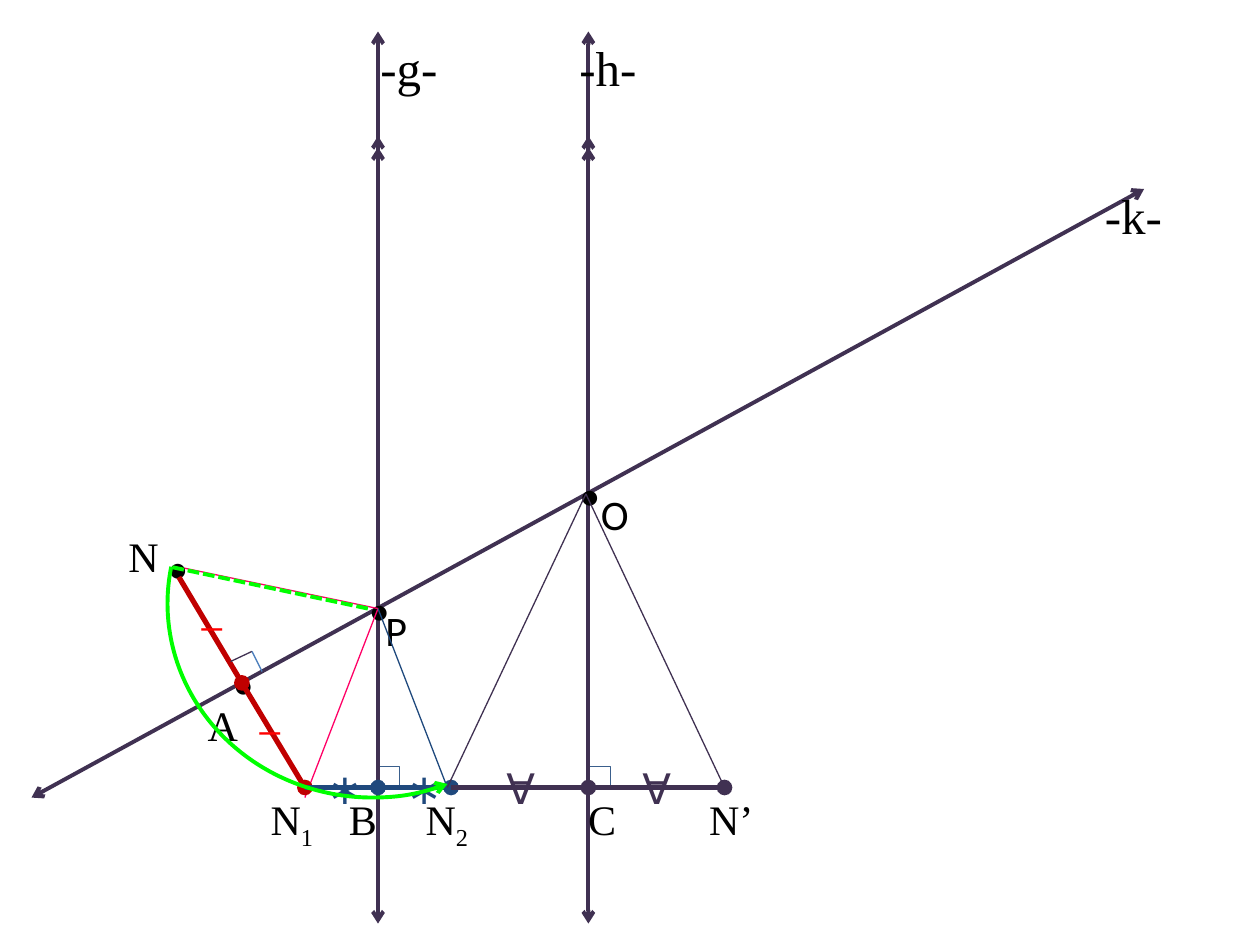
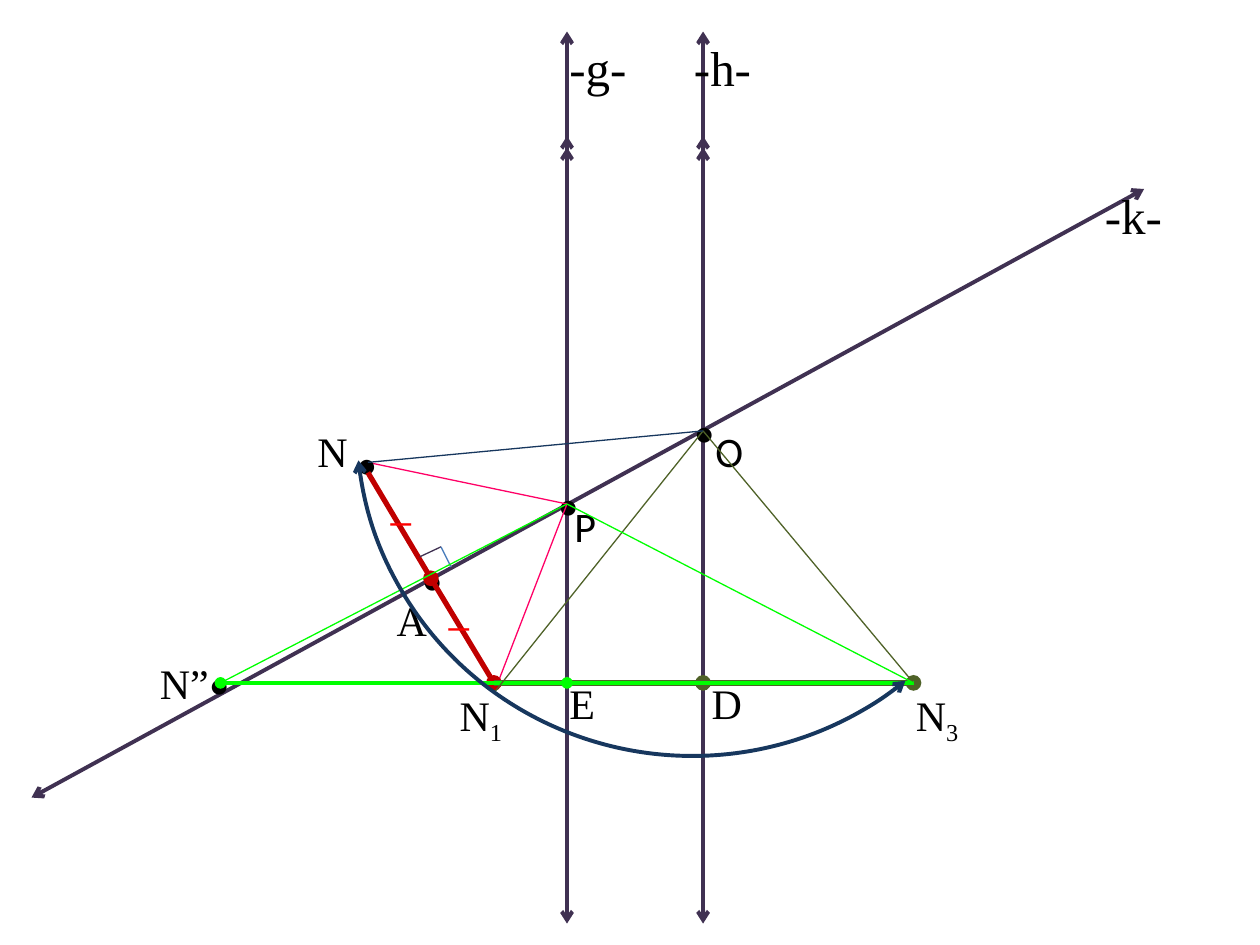
from dataclasses import dataclass

from lxml import etree
from pptx import Presentation
from pptx.dml.color import RGBColor
from pptx.enum import dml, shapes, text
from pptx.oxml.ns import qn
from pptx.util import Inches, Pt


@dataclass(frozen=True)
class Theme:
    ink: str = "000000"
    axis: str = "403152"
    red: str = "C00000"
    tick: str = "FF0000"
    pink: str = "FF0066"
    green: str = "00FF00"
    olive: str = "4F6228"
    blue: str = "1F497D"
    navy: str = "17375E"
    light_blue: str = "4B7EBC"
    square: str = "3A5F8C"
    serif: str = "Times New Roman"
    sans: str = "Calibri"
    label_size: int = 24
    axis_label_size: int = 28
    hairline: float = 0.25
    thin: float = 0.75
    medium: float = 2.25
    thick: float = 3


THEME = Theme()
LABEL_WIDTHS = {"•": 0.36, "_": 0.37, "∗": 0.37, "∀": 0.44, "P": 0.38, "O": 0.42,
                "A": 0.45, "B": 0.43, "C": 0.43, "D": 0.45, "E": 0.41, "N": 0.45,
                "N’": 0.56, "N”": 0.59}
SUBSCRIPTED_WIDTH = 0.56


def shift(origin, dx, dy):
    return origin[0] + dx, origin[1] + dy


def style_line(line, color, width, head=None, tail=None):
    line.color.rgb = RGBColor.from_string(color)
    line.width = Pt(width)
    outline = line._get_or_add_ln()
    for tag, kind in (("a:headEnd", head), ("a:tailEnd", tail)):
        if kind:
            etree.SubElement(outline, qn(tag), type=kind)


def draw_line(slide, start, end, color, width=THEME.thin, head=None, tail=None, dash=None):
    segment = slide.shapes.add_connector(
        shapes.MSO_CONNECTOR.STRAIGHT, *(Inches(v) for v in (*start, *end)))
    etree.SubElement(segment._element.spPr, qn("a:effectLst"))
    if dash:
        segment.line.dash_style = dash
    style_line(segment.line, color, width, head, tail)


def draw_outline(slide, kind, box, color, width, head=None, tail=None):
    outline = slide.shapes.add_shape(kind, *(Inches(v) for v in box))
    outline.shadow.inherit = False
    outline.fill.background()
    style_line(outline.line, color, width, head, tail)
    return outline


def draw_arc(slide, box, angles, color, tail=None):
    """Sweep clockwise between two angles in degrees."""
    arc = draw_outline(slide, shapes.MSO_SHAPE.ARC, box, color, THEME.medium, "arrow", tail)
    for index, degrees in enumerate(angles):
        arc.adjustments[index] = degrees * 0.6  # 60000 units per degree over 100000


def add_text(slide, corner, size, wording, font, points, color, wrap=False):
    box = slide.shapes.add_textbox(*(Inches(v) for v in (*corner, *size)))
    frame = box.text_frame
    frame.word_wrap = wrap
    frame.auto_size = text.MSO_AUTO_SIZE.SHAPE_TO_FIT_TEXT
    paragraph = frame.paragraphs[0]
    paragraph.add_run().text = wording
    paragraph.font.name = font
    paragraph.font.size = Pt(points)
    paragraph.font.color.rgb = RGBColor.from_string(color)
    return paragraph


def add_label(slide, corner, wording, font=THEME.serif, color=THEME.ink, subscript=None):
    width = SUBSCRIPTED_WIDTH if subscript else LABEL_WIDTHS[wording]
    paragraph = add_text(slide, corner, (width, 0.5), wording, font,
                         THEME.label_size, color)
    if subscript:
        run = paragraph.add_run()
        run.text = subscript
        run._r.get_or_add_rPr().set("baseline", "-25000")


def add_mark(slide, corner, symbol, color=THEME.ink):
    add_label(slide, corner, symbol, THEME.sans, color)


def add_dot(slide, point):
    add_mark(slide, shift(point, -0.17, -0.25), "•")


def add_axis_label(slide, corner, wording):
    add_text(slide, corner, (0.83, 0.57), wording, THEME.serif,
             THEME.axis_label_size, THEME.ink, wrap=True)


def draw_bisected(slide, start, middle, end, color, width=THEME.thick):
    """Draw a segment with round ends at its middle and far end."""
    draw_line(slide, start, middle, color, width)
    draw_line(slide, middle, end, color, width, "oval", "oval")


def draw_rays(slide, apex, ends, color):
    for end in ends:
        draw_line(slide, end, apex, color)


def draw_oblique_axis(slide):
    draw_line(slide, (0.25, 6.33), (9.08, 1.5), THEME.axis, THEME.medium, "arrow", "arrow")
    add_axis_label(slide, (8.67, 1.42), "-k-")


def draw_parallel_axis(slide, x, wording, label_shift):
    """Draw a vertical axis with the double arrow that marks it as parallel."""
    draw_line(slide, (x, 0.25), (x, 7.33), THEME.axis, THEME.medium, "arrow", "arrow")
    for tip in (1.17, 1.08):
        draw_line(slide, (x, tip + 0.5), (x, tip), THEME.axis, THEME.medium, tail="arrow")
    add_axis_label(slide, (x + label_shift, 0.25), wording)


def draw_axes(slide, p, o):
    draw_oblique_axis(slide)
    draw_parallel_axis(slide, p[0], "-g-", -0.08)
    draw_parallel_axis(slide, o[0], "-h-", -0.17)
    add_dot(slide, p)
    add_dot(slide, o)
    add_mark(slide, shift(p, -0.04, -0.08), "P")
    add_mark(slide, shift(o, 0, -0.09), "O")


def draw_first_reflection(slide, p):
    """Reflect N in k to N1, with every part placed from P."""
    n, a, n1 = shift(p, -1.58, -0.25), shift(p, -1.08, 0.59), shift(p, -0.58, 1.42)
    draw_rays(slide, p, (shift(p, -1.58, -0.33), shift(p, -0.58, 1.5)), THEME.pink)
    add_dot(slide, shift(p, -1.6, -0.33))
    add_dot(slide, a)
    draw_bisected(slide, n, a, n1, THEME.red)
    add_label(slide, shift(p, -2.08, -0.67), "N")
    add_label(slide, shift(p, -1.45, 0.67), "A")
    add_label(slide, shift(p, -0.95, 1.42), "N", subscript="1")
    corner = shift(p, -1, 0.34)
    draw_line(slide, shift(corner, -0.17, 0.08), corner, THEME.axis)
    draw_line(slide, corner, shift(corner, 0.08, 0.16), THEME.light_blue)
    for offset in ((-1.5, -0.25), (-1.04, 0.58)):
        add_mark(slide, shift(p, *offset), "_", THEME.tick)


def build_reflections_in_g_and_h(slide):
    p, o, base = (3, 4.83), (4.67, 3.92), 6.25
    n1, b, n2, c, image = ((x, base) for x in (2.42, p[0], 3.58, o[0], 5.75))
    for foot in (b, c):
        draw_outline(slide, shapes.MSO_SHAPE.RECTANGLE,
                     (*shift(foot, 0, -0.17), 0.17, 0.17), THEME.square, THEME.hairline)
    draw_axes(slide, p, o)
    draw_first_reflection(slide, p)
    draw_bisected(slide, n1, b, n2, THEME.blue)
    draw_bisected(slide, n2, c, image, THEME.axis)
    for x, wording, subscript in ((2.67, "B", None), (3.28, "N", "2"),
                                  (4.57, "C", None), (5.53, "N’", None)):
        add_label(slide, (x, base), wording, subscript=subscript)
    for x, symbol, color in ((2.5, "∗", THEME.blue), (3.13, "∗", THEME.blue),
                             (3.92, "∀", THEME.axis), (5, "∀", THEME.axis)):
        add_mark(slide, (x, 6), symbol, color)
    draw_rays(slide, p, [(3.55, base)], THEME.blue)
    draw_rays(slide, (4.65, o[1]), [(3.55, base), image], THEME.axis)
    draw_arc(slide, (1.33, 3.25, 3.25, 3.08), (67.39, 190.37), THEME.green)
    draw_line(slide, (2.92, 4.83), (1.36, 4.5), THEME.green, THEME.medium,
              dash=dml.MSO_LINE.SQUARE_DOT)


def build_reflections_in_h_and_g(slide):
    p, o, base = (4.5, 4), (5.58, 3.42), 5.42
    n1, d, n3, e, image = ((x, base) for x in (3.92, o[0], 7.25, p[0], 1.75))
    draw_axes(slide, p, o)
    draw_first_reflection(slide, p)
    draw_bisected(slide, n1, d, n3, THEME.olive)
    add_label(slide, shift(d, -0.03, -0.09), "D")
    add_label(slide, shift(n3, -0.08, 0), "N", subscript="3")
    add_dot(slide, shift(image, -0.02, 0))
    draw_bisected(slide, n3, e, image, THEME.green, THEME.medium)
    add_label(slide, shift(e, -0.08, -0.09), "E")
    add_label(slide, shift(image, -0.58, -0.25), "N”")
    draw_rays(slide, o, [shift(n1, 0, 0.08), n3], THEME.olive)
    draw_rays(slide, p, [n3, image], THEME.green)
    draw_arc(slide, (2.83, 0.75, 5.33, 5.25), (50.19, 173.98), THEME.navy, "arrow")
    draw_line(slide, o, (2.92, 3.67), THEME.navy)


def main():
    deck = Presentation()
    deck.slide_width, deck.slide_height = Inches(10), Inches(7.5)
    blank = deck.slide_layouts[6]
    for build in (build_reflections_in_g_and_h, build_reflections_in_h_and_g):
        build(deck.slides.add_slide(blank))
    deck.save("out.pptx")


if __name__ == "__main__":
    main()
